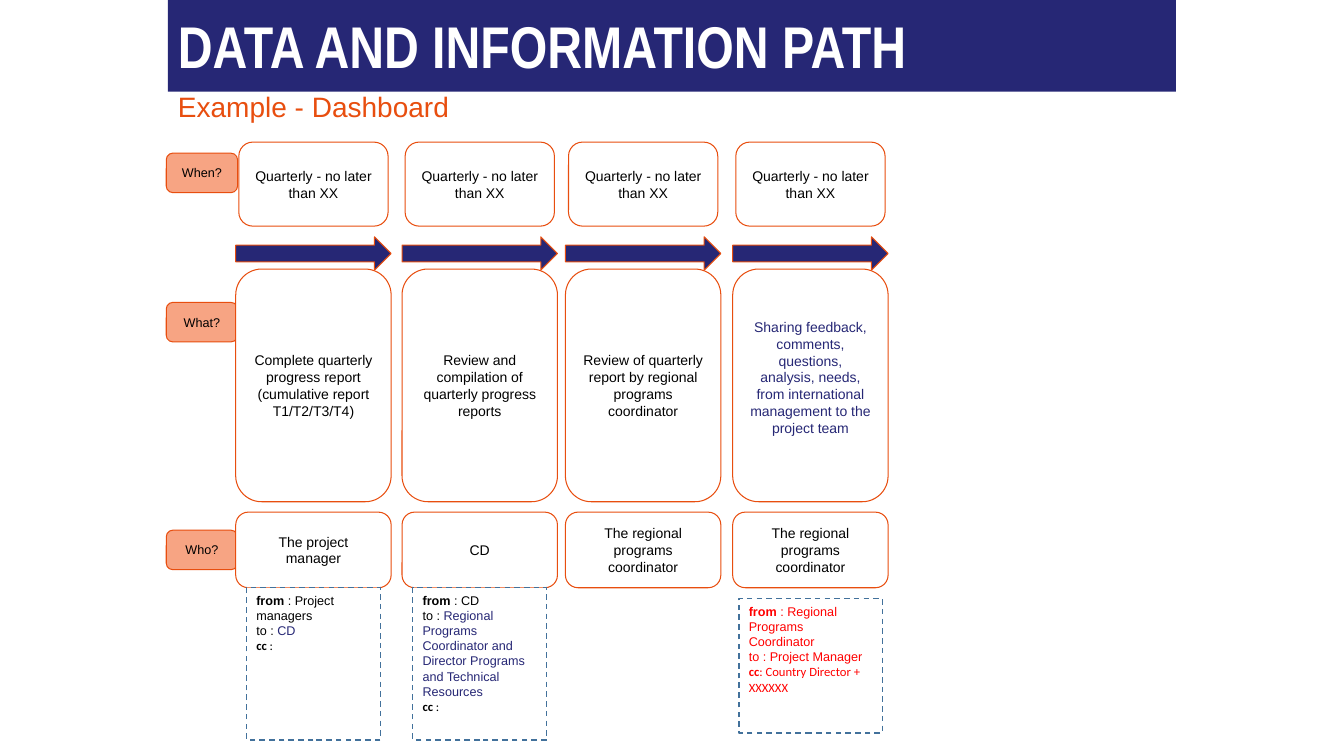
from pptx import Presentation
from pptx.dml.color import RGBColor
from pptx.enum.dml import MSO_LINE
from pptx.enum.shapes import MSO_SHAPE
from pptx.enum.text import MSO_ANCHOR, PP_ALIGN
from pptx.util import Pt

RECTANGLE = MSO_SHAPE.RECTANGLE
ROUNDED = MSO_SHAPE.ROUNDED_RECTANGLE
ARROW = MSO_SHAPE.RIGHT_ARROW
DASH = MSO_LINE.DASH
TOP, MIDDLE = MSO_ANCHOR.TOP, MSO_ANCHOR.MIDDLE
LEFT, CENTER = PP_ALIGN.LEFT, PP_ALIGN.CENTER

NAVY, ORANGE, PEACH, BLUE = "262775", "E84E0F", "F7A483", "42719B"
WHITE, BLACK, RED = "FFFFFF", "000000", "FF0000"

INSET = 7.2
STEP_WIDTH = 111
ROW_LABELS = [("When?", 109.4), ("What?", 216), ("Who?", 378.7)]
DEADLINE = "Quarterly - no later than XX"
COORDINATOR = "The regional programs coordinator"
# Left edge, task, task colour, space below the task, person in charge
STEPS = [
    (168.4, "Complete quarterly progress report (cumulative report T1/T2/T3/T4)",
     BLACK, INSET, "The project manager"),
    (287.2, "Review and compilation of quarterly progress reports",
     BLACK, INSET, "CD"),
    (403.9, "Review of quarterly report by regional programs coordinator",
     BLACK, INSET, COORDINATOR),
    (523.4, "Sharing feedback, comments, questions, analysis, needs, "
     "from international management to the project team",
     NAVY, INSET + 11.5, COORDINATOR),
]


def color(value):
    return RGBColor.from_string(value)


def run(text, **style):
    return text, style


def write(shape, paragraphs, size=10, font="Arial", fill=BLACK, bold=False,
          align=CENTER, anchor=MIDDLE, vertical=(INSET, INSET)):
    """Write paragraphs, each a list of runs whose style overrides the defaults."""
    frame = shape.text_frame
    frame.word_wrap = True
    frame.vertical_anchor = anchor
    frame.margin_left = frame.margin_right = Pt(INSET)
    frame.margin_top, frame.margin_bottom = map(Pt, vertical)
    for index, runs in enumerate(paragraphs):
        paragraph = frame.add_paragraph() if index else frame.paragraphs[0]
        paragraph.alignment = align
        for text, style in runs:
            part = paragraph.add_run()
            part.text = text
            part.font.size = Pt(size)
            part.font.name = style.get("font", font)
            part.font.bold = style.get("bold", bold)
            part.font.color.rgb = color(style.get("fill", fill))


def add_shape(slide, kind, left, top, width, height, fill=WHITE,
              line=ORANGE, line_width=0.75, dash=None):
    shape = slide.shapes.add_shape(kind, Pt(left), Pt(top), Pt(width), Pt(height))
    shape.shadow.inherit = False
    shape.fill.solid()
    shape.fill.fore_color.rgb = color(fill)
    if line:
        shape.line.color.rgb = color(line)
        shape.line.width = Pt(line_width)
        shape.line.dash_style = dash
    else:
        shape.line.fill.background()
    return shape


def add_row_label(slide, text, top):
    label = add_shape(slide, ROUNDED, 118.8, top, 50.9, 28.2, fill=PEACH)
    write(label, [[run(text)]], size=9)


def add_step(slide, left, task, task_color, space_below, person):
    deadline = add_shape(slide, ROUNDED, left + 2.2, 101.5, 106.6, 60)
    write(deadline, [[run(DEADLINE)]])
    add_shape(slide, ARROW, left, 169.2, STEP_WIDTH, 23.8, fill=NAVY)
    task_card = add_shape(slide, ROUNDED, left, 192.2, STEP_WIDTH, 166.2)
    write(task_card, [[run(task)]], fill=task_color, vertical=(INSET, space_below))
    person_card = add_shape(slide, ROUNDED, left, 365.8, STEP_WIDTH, 54)
    write(person_card, [[run(person)]])


def add_mail_note(slide, left, top, width, height, paragraphs, fill=BLACK):
    note = add_shape(slide, RECTANGLE, left, top, width, height,
                     line=BLUE, line_width=1, dash=DASH)
    write(note, paragraphs, size=9, fill=fill, align=LEFT, anchor=TOP,
          vertical=(3.6, 3.6))


def mail_lines(sender, recipient, copied, recipient_color, copy_mark="cc "):
    return [
        [run("from ", bold=True), run(": " + sender)],
        [run("to : "), run(recipient, fill=recipient_color)],
        [run(copy_mark, bold=True, font="Calibri"),
         run(":" + copied, font="Calibri")],
    ]


def add_heading(slide):
    banner = add_shape(slide, RECTANGLE, 120, 0, 720, 65.5, fill=NAVY, line=None)
    write(banner, [[run("DATA AND INFORMATION PATH")]], size=42,
          font="Arial Narrow", fill=WHITE, bold=True, align=LEFT, anchor=TOP)
    subtitle = slide.shapes.add_textbox(Pt(120), Pt(57), Pt(435), Pt(39))
    write(subtitle, [[run("Example - Dashboard")]], size=20, fill=ORANGE,
          align=LEFT, anchor=TOP)


def main():
    presentation = Presentation()
    presentation.slide_width, presentation.slide_height = Pt(960), Pt(540)
    slide = presentation.slides.add_slide(presentation.slide_layouts[6])

    for text, top in ROW_LABELS:
        add_row_label(slide, text, top)
    for step in STEPS:
        add_step(slide, *step)

    add_mail_note(slide, 176, 419.8, 95.8, 108.7,
                  mail_lines("Project managers", "CD", "", NAVY))
    add_mail_note(slide, 294.8, 419.8, 95.8, 108.7, mail_lines(
        "CD", "Regional Programs Coordinator and Director Programs "
        "and Technical Resources", "", NAVY))
    add_mail_note(slide, 527.8, 427.7, 102.6, 95.8, mail_lines(
        "Regional Programs Coordinator", "Project Manager",
        " Country Director + XXXXXX", RED, copy_mark="cc"), fill=RED)
    add_heading(slide)
    presentation.save("out.pptx")


if __name__ == "__main__":
    main()
